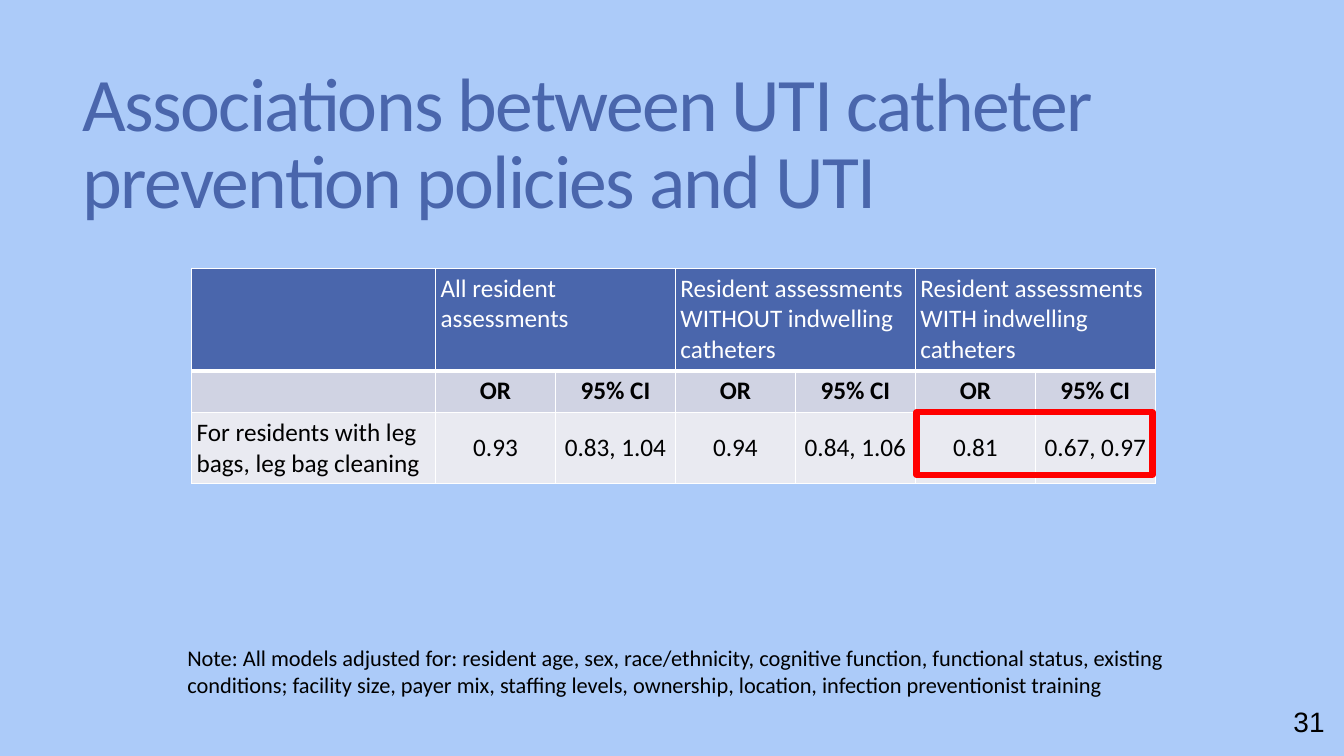
from lxml.etree import SubElement
from pptx import Presentation
from pptx.dml.color import RGBColor
from pptx.enum.shapes import MSO_SHAPE
from pptx.enum.text import MSO_ANCHOR, MSO_AUTO_SIZE, PP_ALIGN
from pptx.oxml.ns import qn
from pptx.util import Inches, Pt

# Content
TITLE = "Associations between UTI catheter prevention policies and UTI"
GROUPS = [
    ("All resident assessments", "0.93", "0.83, 1.04"),
    ("Resident assessments WITHOUT indwelling catheters", "0.94", "0.84, 1.06"),
    ("Resident assessments WITH indwelling catheters", "0.81", "0.67, 0.97"),
]
MEASURES = ("OR", "95% CI")
POLICY = "For residents with leg bags, leg bag cleaning"
NOTE = ("Note: All models adjusted for: resident age, sex, race/ethnicity, cognitive "
        "function, functional status, existing conditions; facility size, payer mix, "
        "staffing levels, ownership, location, infection preventionist training")
PAGE = "31"

COLORS = {"background": "ACCBF9", "accent": "4A66AC", "measures": "D0D3E3",
          "values": "E9EAF1", "white": "FFFFFF", "black": "000000", "highlight": "FF0000"}

# Grid, in inches
TABLE_LEFT, TABLE_TOP = 1.9, 2.66
POLICY_WIDTH, MEASURE_WIDTH = 2.42, 1.19
ROW_HEIGHTS = (1.02, 0.41, 0.71)
CELL_MARGIN = Inches(0.05)


def color(name):
    return RGBColor.from_string(COLORS[name])


def style(paragraph, size, ink, font="Calibri", bold=False):
    for run in paragraph.runs:
        run.font.size, run.font.name, run.font.bold = Pt(size), font, bold
        run.font.color.rgb = color(ink)


def add_text(slide, box, text, size, font="Calibri", wrap=True):
    frame = slide.shapes.add_textbox(*map(Inches, box)).text_frame
    frame.word_wrap = wrap
    frame.auto_size = MSO_AUTO_SIZE.SHAPE_TO_FIT_TEXT
    frame.text = text
    style(frame.paragraphs[0], size, "black", font)


def add_borders(cell, bottom):
    properties = cell._tc.get_or_add_tcPr()
    for index, (side, width) in enumerate(zip("LRTB", (1, 1, 1, bottom))):
        line = properties.makeelement(qn(f"a:ln{side}"), {"w": str(Pt(width))})
        fill = SubElement(line, qn("a:solidFill"))
        SubElement(fill, qn("a:srgbClr"), val=COLORS["white"])
        properties.insert(index, line)


def fill_cell(cell, text, row, column):
    cell.margin_left = cell.margin_right = CELL_MARGIN
    cell.margin_top = cell.margin_bottom = CELL_MARGIN
    cell.fill.solid()
    cell.fill.fore_color.rgb = color(("accent", "measures", "values")[row])
    cell.text = text
    paragraph = cell.text_frame.paragraphs[0]
    paragraph.font.size = Pt(18)
    style(paragraph, 18, "black" if row else "white", bold=row == 1)
    centred = row > 0 and column > 0
    paragraph.alignment = PP_ALIGN.CENTER if centred else PP_ALIGN.LEFT
    middle = row == 2 and column > 0
    cell.vertical_anchor = MSO_ANCHOR.MIDDLE if middle else MSO_ANCHOR.TOP
    add_borders(cell, 1 if row else 3)


def add_results(slide):
    rows = [[""], [""], [POLICY]]
    for group, *values in GROUPS:
        rows[0] += [group, ""]
        rows[1] += MEASURES
        rows[2] += values
    widths = [POLICY_WIDTH] + [MEASURE_WIDTH] * (len(rows[0]) - 1)
    table = slide.shapes.add_table(
        len(rows), len(widths), Inches(TABLE_LEFT), Inches(TABLE_TOP),
        Inches(sum(widths)), Inches(sum(ROW_HEIGHTS))).table
    for column, width in zip(table.columns, widths):
        column.width = Inches(width)
    for row, height in zip(table.rows, ROW_HEIGHTS):
        row.height = Inches(height)
    for r, texts in enumerate(rows):
        for c, text in enumerate(texts):
            fill_cell(table.cell(r, c), text, r, c)
    for c in range(1, len(widths), len(MEASURES)):
        table.cell(0, c).merge(table.cell(0, c + 1))


def add_title(slide):
    title = slide.shapes.title
    title.left, title.top, title.width, title.height = map(Inches, (0.72, 0.55, 11.78, 1.81))
    frame = title.text_frame
    frame.text = TITLE
    frame.word_wrap = True
    frame.auto_size = MSO_AUTO_SIZE.NONE
    frame.vertical_anchor = MSO_ANCHOR.MIDDLE
    paragraph = frame.paragraphs[0]
    paragraph.alignment, paragraph.line_spacing = PP_ALIGN.LEFT, 0.85
    style(paragraph, 54, "accent")
    paragraph.runs[0].font._element.set("spc", "-120")


def add_highlight(slide):
    frame = slide.shapes.add_shape(MSO_SHAPE.RECTANGLE, *map(Inches, (9.09, 4.09, 2.34, 0.62)))
    frame.shadow.inherit = False
    frame.fill.background()
    frame.line.color.rgb = color("highlight")
    frame.line.width = Pt(4.5)


def main():
    deck = Presentation()
    deck.slide_width, deck.slide_height = Inches(13.33), Inches(7.5)
    slide = deck.slides.add_slide(deck.slide_layouts[5])
    slide.background.fill.solid()
    slide.background.fill.fore_color.rgb = color("background")
    add_title(slide)
    add_results(slide)
    add_text(slide, (1.76, 6.34, 10.13, 0.64), NOTE, 16)
    add_highlight(slide)
    add_text(slide, (12.73, 6.94, 0.51, 0.44), PAGE, 20, "Arial", wrap=False)
    deck.save("out.pptx")


if __name__ == "__main__":
    main()
